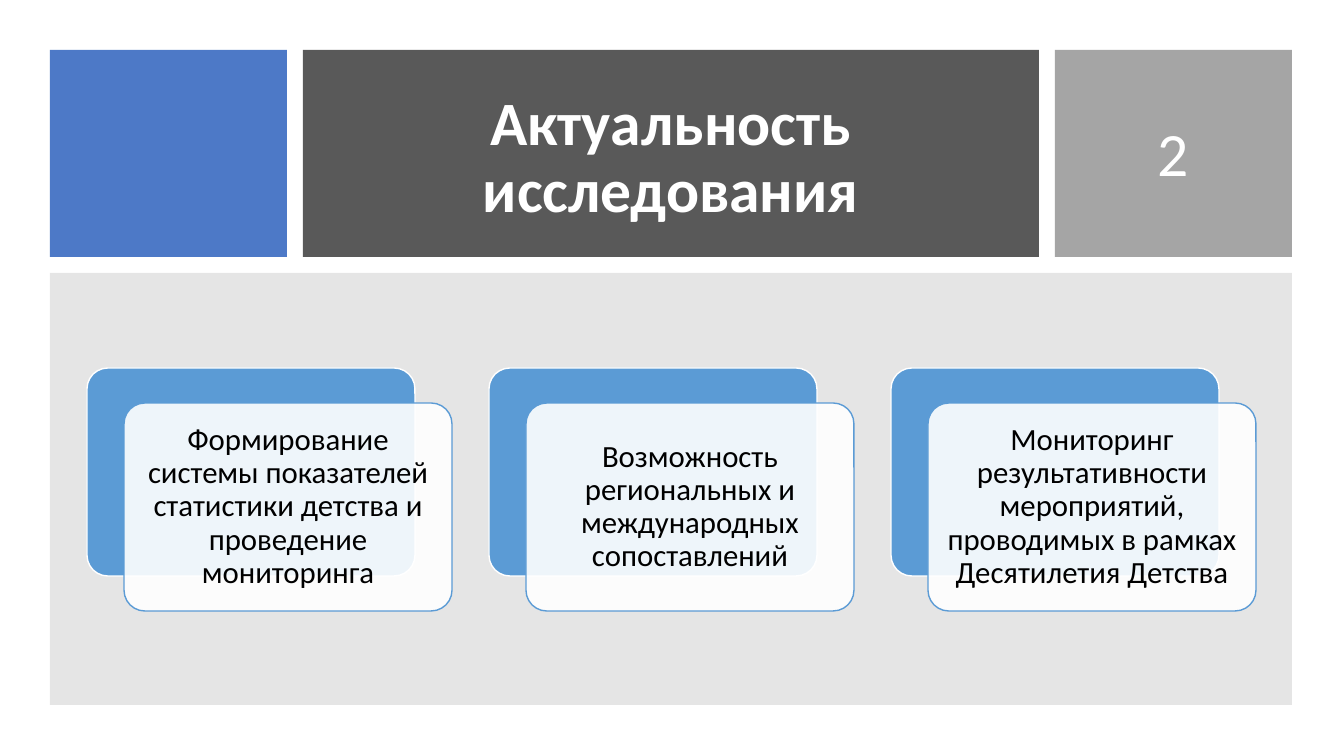
from lxml import etree
from pptx import Presentation
from pptx.dml.color import RGBColor
from pptx.enum.shapes import MSO_SHAPE
from pptx.enum.text import MSO_ANCHOR, PP_ALIGN
from pptx.oxml.ns import qn
from pptx.util import Emu, Pt

RECT, ROUND = MSO_SHAPE.RECTANGLE, MSO_SHAPE.ROUNDED_RECTANGLE
MIDDLE, CENTER = MSO_ANCHOR.MIDDLE, PP_ALIGN.CENTER
BLACK = RGBColor(0x00, 0x00, 0x00)
WHITE = RGBColor(0xFF, 0xFF, 0xFF)
ROYAL = RGBColor(0x44, 0x72, 0xC4)
SKY = RGBColor(0x5B, 0x9B, 0xD5)
CHARCOAL = RGBColor(0x59, 0x59, 0x59)
SILVER = RGBColor(0xA5, 0xA5, 0xA5)
GRAY = RGBColor(0x80, 0x80, 0x80)

TITLE = "Актуальность исследования"
NUMBER = "2"
REASONS = [
    "Формирование системы показателей статистики детства и проведение мониторинга",
    "Возможность региональных и международных сопоставлений",
    "Мониторинг результативности мероприятий, проводимых в рамках Десятилетия Детства",
]

EMU_PER_PX = 914400 / 100.8
MARGIN, GAP = 50, 16
HEADER_HEIGHT, SIDE_WIDTH, TITLE_WIDTH = 207, 237, 736
BODY_HEIGHT = 432
CARD_LEFT, CARD_TOP, CARD_WIDTH, CARD_HEIGHT = 87, 368, 328, 208
CARD_PITCH, SHIFT_X, SHIFT_Y = 402, 37, 35

TITLE_INSETS = (42, 35, 42, 24)
NUMBER_INSETS = (10, 12, 10, 5)
CARD_INSETS = (9, 9, 9, 9)


def px(length):
    return Emu(round(length * EMU_PER_PX))


def add_block(page, kind, bounds, color, opacity=100, outline=None):
    block = page.shapes.add_shape(kind, *map(px, bounds))
    block.shadow.inherit = False
    block.fill.solid()
    block.fill.fore_color.rgb = color
    if opacity < 100:
        tint = block.fill._xPr.find(".//" + qn("a:srgbClr"))
        etree.SubElement(tint, qn("a:alpha"), val=str(opacity * 1000))
    if outline is None:
        block.line.fill.background()
    else:
        block.line.color.rgb = outline
        block.line.width = Pt(1)
    if kind == ROUND:
        block.adjustments[0] = 0.1
    return block


def write(block, text, insets, size, color, bold=False):
    frame = block.text_frame
    sides = ("margin_left", "margin_top", "margin_right", "margin_bottom")
    settings = dict(zip(sides, map(px, insets)))
    settings.update(word_wrap=True, vertical_anchor=MIDDLE)
    para = frame.paragraphs[0]
    span = para.add_run()
    span.text = text
    span.font.color.rgb = color
    formats = [
        (frame, settings),
        (para, {"alignment": CENTER, "line_spacing": 0.9}),
        (span.font, {"name": "Calibri", "size": Pt(size), "bold": bold}),
    ]
    for target, values in formats:
        for name, value in values.items():
            setattr(target, name, value)


def add_header(page):
    title_left = MARGIN + SIDE_WIDTH + GAP
    number_left = title_left + TITLE_WIDTH + GAP
    add_block(page, RECT, (MARGIN, MARGIN, SIDE_WIDTH, HEADER_HEIGHT), ROYAL, 95)
    heading = add_block(page, RECT, (title_left, MARGIN, TITLE_WIDTH, HEADER_HEIGHT), CHARCOAL)
    write(heading, TITLE, TITLE_INSETS, 44, WHITE, True)
    counter = add_block(page, RECT, (number_left, MARGIN, SIDE_WIDTH, HEADER_HEIGHT), SILVER)
    write(counter, NUMBER, NUMBER_INSETS, 44, WHITE)


def add_body(page):
    width = 2 * (SIDE_WIDTH + GAP) + TITLE_WIDTH
    add_block(page, RECT, (MARGIN, MARGIN + HEADER_HEIGHT + GAP, width, BODY_HEIGHT), GRAY, 20)
    for index, reason in enumerate(REASONS):
        left = CARD_LEFT + index * CARD_PITCH
        add_block(page, ROUND, (left, CARD_TOP, CARD_WIDTH, CARD_HEIGHT), SKY, outline=WHITE)
        front = (left + SHIFT_X, CARD_TOP + SHIFT_Y, CARD_WIDTH, CARD_HEIGHT)
        card = add_block(page, ROUND, front, WHITE, 90, SKY)
        write(card, reason, CARD_INSETS, 22, BLACK)


def main():
    deck = Presentation()
    deck.slide_width, deck.slide_height = px(1344), px(756)
    page = deck.slides.add_slide(deck.slide_layouts[6])
    add_header(page)
    add_body(page)
    deck.save("out.pptx")


if __name__ == "__main__":
    main()
